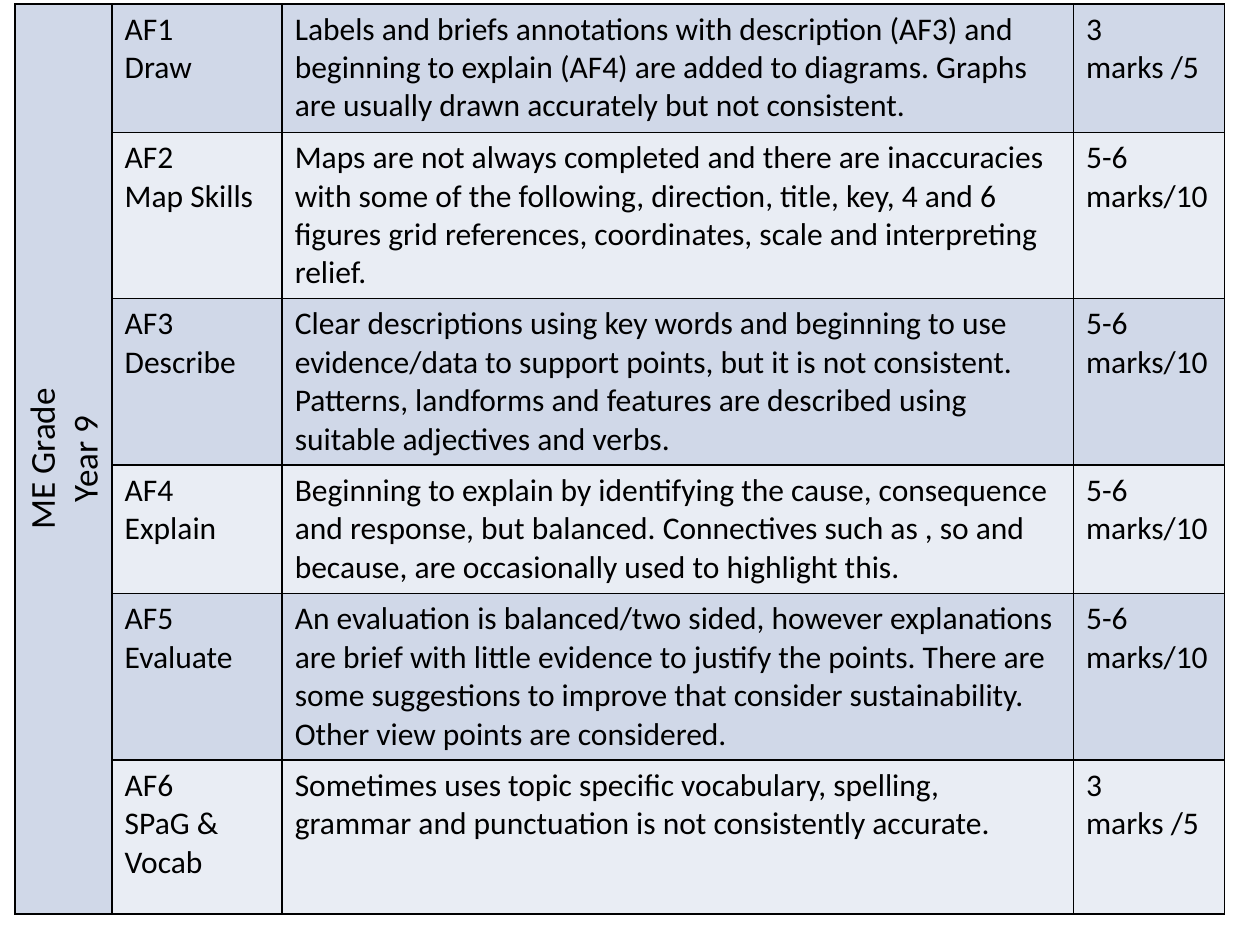
from dataclasses import dataclass

from lxml import etree
from pptx import Presentation
from pptx.dml.color import RGBColor
from pptx.enum.text import MSO_ANCHOR, PP_ALIGN
from pptx.oxml.ns import qn
from pptx.util import Inches, Pt

CENTER, LEFT = PP_ALIGN.CENTER, PP_ALIGN.LEFT
MIDDLE = MSO_ANCHOR.MIDDLE


@dataclass(frozen=True)
class Theme:
    font: str = "Calibri"
    ink: str = "000000"
    bands: tuple = ("D0D8E8", "E9EDF4")
    grade_size: int = 20
    body_size: int = 18
    border: int = 1


theme = Theme()


def write_cell(cell, lines, size, align=LEFT):
    frame = cell.text_frame
    for index, line in enumerate(lines):
        para = frame.paragraphs[0] if index == 0 else frame.add_paragraph()
        para.alignment = align
        span = para.add_run()
        span.text = line
        span.font.name = theme.font
        span.font.size = Pt(size)
        span.font.color.rgb = RGBColor.from_string(theme.ink)


def style_cell(cell, color):
    cell.fill.solid()
    cell.fill.fore_color.rgb = RGBColor.from_string(color)
    properties = cell._tc.get_or_add_tcPr()
    # Border lines come before the fill
    for index, side in enumerate(("lnL", "lnR", "lnT", "lnB")):
        line = etree.Element(qn(f"a:{side}"), w=str(Pt(theme.border)))
        fill = etree.SubElement(line, qn("a:solidFill"))
        etree.SubElement(fill, qn("a:srgbClr"), val=theme.ink)
        properties.insert(index, line)


# Content: row height, focus, description, marks
grade = ["ME Grade", "Year 9"]
out_of_five = ["3 marks /5"]
out_of_ten = ["5-6", "marks/10"]
criteria = [
    (1.02, ["AF1", "Draw"],
     ["Labels and briefs annotations with description (AF3) and beginning to "
      "explain (AF4) are added to diagrams. Graphs are usually drawn "
      "accurately but not consistent."], out_of_five),
    (1.32, ["AF2", "Map Skills"],
     ["Maps are not always completed and there are inaccuracies with some of "
      "the following, direction, title, key, 4 and 6 figures grid references, "
      "coordinates, scale and interpreting relief."], out_of_ten),
    (1.32, ["AF3", "Describe"],
     ["Clear descriptions using key words and beginning to use evidence/data "
      "to support points, but it is not consistent.",
      "Patterns, landforms and features are described using suitable "
      "adjectives and verbs."], out_of_ten),
    (1.02, ["AF4", "Explain"],
     ["Beginning to explain by identifying the cause, consequence and "
      "response, but balanced. Connectives such as , so and because, are "
      "occasionally used to highlight this."], out_of_ten),
    (1.32, ["AF5", "Evaluate"],
     ["An evaluation is balanced/two sided, however explanations are brief "
      "with little evidence to justify the points. There are some suggestions "
      "to improve that consider sustainability. Other view points are "
      "considered."], out_of_ten),
    (1.22, ["AF6", "SPaG & Vocab"],
     ["Sometimes uses topic specific vocabulary, spelling, grammar and "
      "punctuation is not consistently accurate."], out_of_five),
]
column_widths = [0.77, 1.35, 6.28, 1.2]

# Page
deck = Presentation()
deck.slide_width, deck.slide_height = Inches(10), Inches(7.5)
page = deck.slides.add_slide(deck.slide_layouts[6])

# Table grid
table = page.shapes.add_table(
    len(criteria), len(column_widths), Inches(0.12), Inches(0.03),
    Inches(sum(column_widths)), Inches(sum(row[0] for row in criteria))).table
table.first_row = table.horz_banding = False
for column, width in zip(table.columns, column_widths):
    column.width = Inches(width)

# Criteria rows in alternating bands
for row_index, (height, *texts) in enumerate(criteria):
    table.rows[row_index].height = Inches(height)
    band = theme.bands[row_index % 2]
    style_cell(table.cell(row_index, 0), theme.bands[0])
    for column_index, lines in enumerate(texts, start=1):
        cell = table.cell(row_index, column_index)
        style_cell(cell, band)
        write_cell(cell, lines, theme.body_size)

# Grade label, turned and merged down the first column
grade_cell = table.cell(0, 0)
grade_cell.merge(table.cell(len(criteria) - 1, 0))
grade_cell.vertical_anchor = MIDDLE
grade_cell._tc.get_or_add_tcPr().set("vert", "vert270")
write_cell(grade_cell, grade, theme.grade_size, CENTER)

deck.save("out.pptx")
